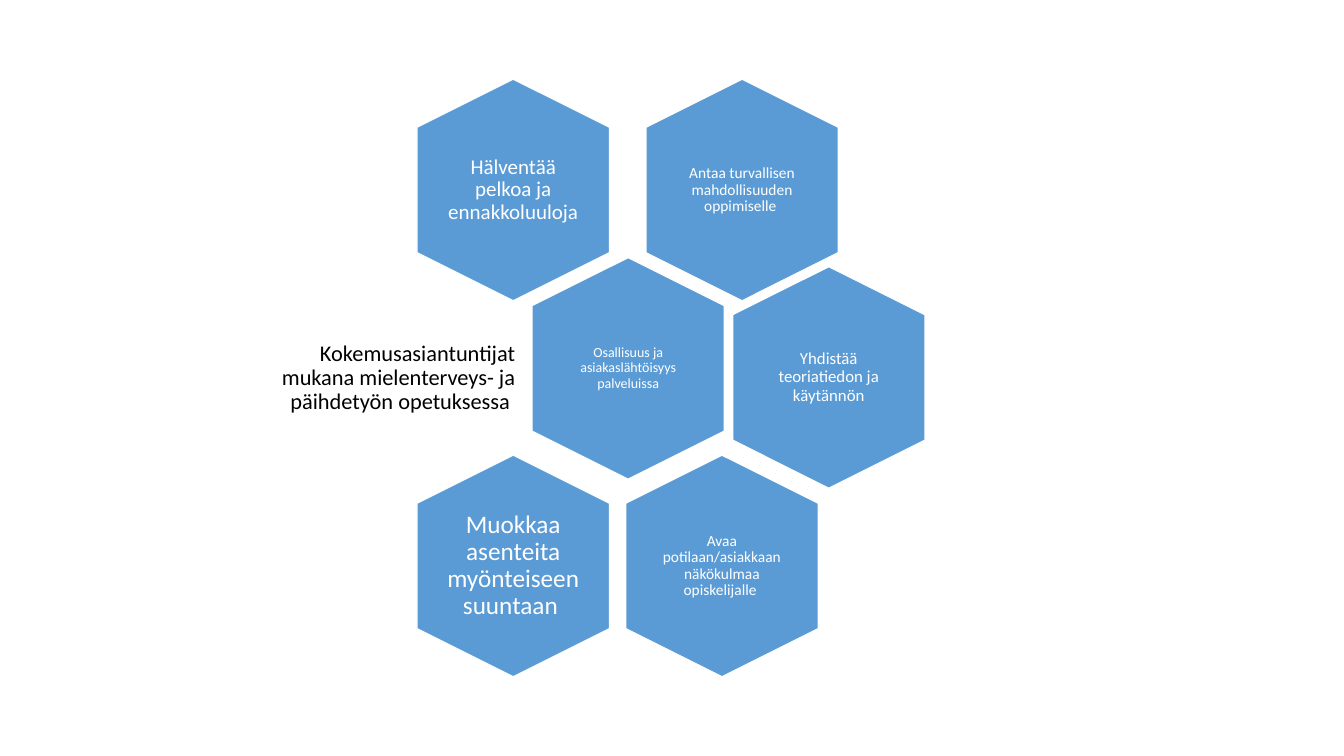
import dataclasses

import pptx
import pptx.dml.color
import pptx.enum.shapes
import pptx.enum.text
import pptx.util

Inches = pptx.util.Inches
Pt = pptx.util.Pt
Align = pptx.enum.text.PP_ALIGN


@dataclasses.dataclass
class Theme:
    """Hold the colours, type sizes and font."""
    blue: str = "5B9BD5"
    white: str = "FFFFFF"
    black: str = "000000"
    font: str = "Calibri"
    tiny: int = 10
    small: int = 11
    medium: int = 12
    large: int = 15
    title: int = 16
    huge: int = 18


def color(code):
    """Turn a hex code into a colour."""
    return pptx.dml.color.RGBColor.from_string(code)


def apply(item, style):
    """Set each format value on an item."""
    for name, value in style.items():
        setattr(item, name, value)


class Board:
    """Draw styled elements on the current slide."""

    def __init__(self, slide, theme):
        """Keep the slide and its theme."""
        self.slide = slide
        self.theme = theme

    def label(self, box, text, size, inset, ink, align):
        """Add a wrapped text box centred in height."""
        shape = self.slide.shapes.add_textbox(*map(Inches, box))
        frame = shape.text_frame
        sides = ("left", "top", "right", "bottom")
        apply(frame, {f"margin_{side}": Inches(inset) for side in sides})
        apply(frame, {
            "word_wrap": True,
            "vertical_anchor": pptx.enum.text.MSO_ANCHOR.MIDDLE,
        })
        para = frame.paragraphs[0]
        apply(para, {"text": text, "alignment": align, "line_spacing": 0.9})
        font = para.runs[0].font
        apply(font, {"name": self.theme.font, "size": Pt(size)})
        font.color.rgb = color(ink)

    def cell(self, left, top, text, size, inset):
        """Add an upright hexagon with its label."""
        shape = self.slide.shapes.add_shape(
            pptx.enum.shapes.MSO_SHAPE.HEXAGON,
            *map(Inches, (left, top, 2.2, 1.91)))
        shape.rotation = 90
        shape.shadow.inherit = False
        shape.fill.solid()
        shape.fill.fore_color.rgb = color(self.theme.blue)
        shape.line.color.rgb = color(self.theme.white)
        shape.line.width = Pt(1)
        box = (left + 0.44, top + 0.2, 1.32, 1.51)
        self.label(box, text, size, inset, self.theme.white, Align.CENTER)


def main():
    """Build and save the slide."""
    deck = pptx.Presentation()
    apply(deck, {"slide_width": Inches(13.33), "slide_height": Inches(7.5)})
    theme = Theme()
    board = Board(deck.slides.add_slide(deck.slide_layouts[6]), theme)
    cells = [
        (6.26, 0.93, "Antaa turvallisen mahdollisuuden oppimiselle ", theme.small, 0.05),
        (3.99, 0.93, "Hälventää pelkoa ja ennakkoluuloja", theme.large, 0),
        (5.13, 2.7, "Osallisuus ja asiakaslähtöisyys palveluissa", theme.tiny, 0.04),
        (7.12, 2.79, "Yhdistää teoriatiedon ja käytännön", theme.medium, 0),
        (6.06, 4.66, "Avaa potilaan/asiakkaan näkökulmaa opiskelijalle ", theme.small, 0.05),
        (3.99, 4.66, "Muokkaa asenteita myönteiseen suuntaan ", theme.huge, 0),
    ]
    for cell in cells:
        board.cell(*cell)
    board.label(
        (2.68, 3.06, 2.5, 1.39),
        "Kokemusasiantuntijat mukana mielenterveys- ja päihdetyön opetuksessa ",
        theme.title, 0.07, theme.black, Align.RIGHT)
    deck.save("out.pptx")


if __name__ == "__main__":
    main()
